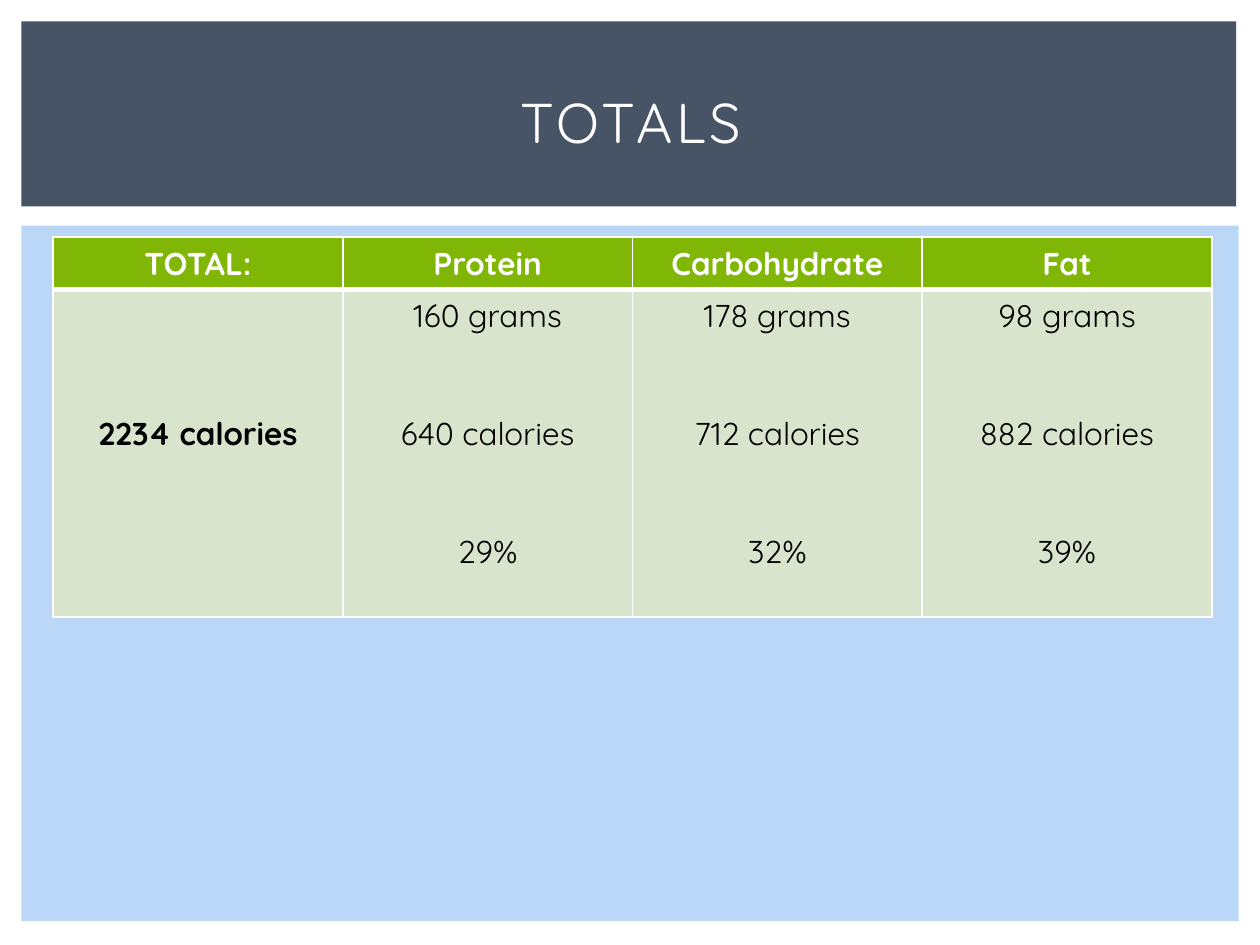
from dataclasses import dataclass
from typing import Any

from lxml.etree import SubElement
from pptx import Presentation
from pptx.dml.color import RGBColor
from pptx.enum.shapes import MSO_SHAPE as SHAPE
from pptx.enum.text import MSO_ANCHOR as ANCHOR, PP_ALIGN as ALIGN
from pptx.oxml.ns import qn
from pptx.util import Cm, Pt

WHITE = RGBColor(0xFF, 0xFF, 0xFF)
BLACK = RGBColor(0x00, 0x00, 0x00)
SLATE = RGBColor(0x46, 0x54, 0x66)
SKY = RGBColor(0xBB, 0xD7, 0xF8)
GREEN = RGBColor(0x80, 0xB6, 0x06)
PALE_GREEN = RGBColor(0xD8, 0xE5, 0xCC)

HEAD = {"name": "Quicksand", "size": Pt(18), "bold": True}
BODY = HEAD | {"bold": False}
TITLE = BODY | {"size": Pt(32)}
LINE_GAP = Pt(45)
ROW_HEIGHTS = (Cm(1.04), Cm(6.6))


@dataclass
class Panel:
    left: float
    top: float
    width: float
    height: float
    color: RGBColor


@dataclass
class Entry:
    lines: tuple[str, ...]
    fill: RGBColor
    color: RGBColor
    font: dict[str, Any]
    margin_top: float = 0.13
    bottom_border: float = 1


PANELS = (
    Panel(0.43, 4.55, 24.54, 14.02, SKY),
    Panel(0.43, 0.43, 24.49, 3.73, SLATE),
)
HEADINGS = ("TOTAL:", "Protein", "Carbohydrate", "Fat")
AMOUNTS = (
    ("160 grams", "640 calories", "29%"),
    ("178 grams", "712 calories", "32%"),
    ("98 grams", "882 calories", "39%"),
)
ROWS = (
    [Entry((h,), GREEN, WHITE, HEAD, bottom_border=3) for h in HEADINGS],
    [Entry(("2234 calories",), PALE_GREEN, BLACK, HEAD, margin_top=2.52)]
    + [Entry(a, PALE_GREEN, BLACK, BODY) for a in AMOUNTS],
)


def add_panel(shapes, panel: Panel) -> None:
    sp = shapes.add_shape(SHAPE.RECTANGLE, Cm(panel.left), Cm(panel.top),
                          Cm(panel.width), Cm(panel.height))
    sp.shadow.inherit = False
    sp.fill.solid()
    sp.fill.fore_color.rgb = panel.color
    sp.line.fill.background()


def write_line(p, text: str, color: RGBColor, font: dict[str, Any]):
    p.alignment = ALIGN.CENTER
    r = p.add_run()
    r.text = text
    for key, value in font.items():
        setattr(r.font, key, value)
    r.font.color.rgb = color
    return r


def add_title(shapes, text: str) -> None:
    sp = shapes.add_textbox(Cm(1.07), Cm(0.99), Cm(23.29), Cm(2.92))
    tf = sp.text_frame
    tf.word_wrap = True
    tf.vertical_anchor = ANCHOR.MIDDLE
    r = write_line(tf.paragraphs[0], text, WHITE, TITLE)
    r.font._element.set("spc", "200")


def set_borders(cell, bottom: float) -> None:
    tc_pr = cell._tc.get_or_add_tcPr()
    widths = {"lnL": 1, "lnR": 1, "lnT": 1, "lnB": bottom}
    for side, width in widths.items():
        ln = SubElement(tc_pr, qn(f"a:{side}"), w=str(Pt(width)))
        fill = SubElement(ln, qn("a:solidFill"))
        SubElement(fill, qn("a:srgbClr"), val=str(WHITE))


def fill_cell(cell, entry: Entry) -> None:
    set_borders(cell, entry.bottom_border)
    cell.fill.solid()
    cell.fill.fore_color.rgb = entry.fill
    cell.margin_top = Cm(entry.margin_top)
    tf = cell.text_frame
    for i, line in enumerate(entry.lines):
        p = tf.add_paragraph() if i else tf.paragraphs[0]
        if i:
            p.space_before = LINE_GAP
        write_line(p, line, entry.color, entry.font)


def add_totals_table(shapes) -> None:
    table = shapes.add_table(len(ROWS), len(HEADINGS), Cm(1.07), Cm(4.78),
                             Cm(23.36), sum(ROW_HEIGHTS)).table
    for row, height, entries in zip(table.rows, ROW_HEIGHTS, ROWS):
        row.height = height
        for cell, entry in zip(row.cells, entries):
            fill_cell(cell, entry)


def main() -> None:
    prs = Presentation()
    prs.slide_width, prs.slide_height = Cm(25.4), Cm(19.05)
    shapes = prs.slides.add_slide(prs.slide_layouts[6]).shapes
    for panel in PANELS:
        add_panel(shapes, panel)
    add_totals_table(shapes)
    add_title(shapes, "TOTALS")
    prs.save("out.pptx")


if __name__ == "__main__":
    main()
